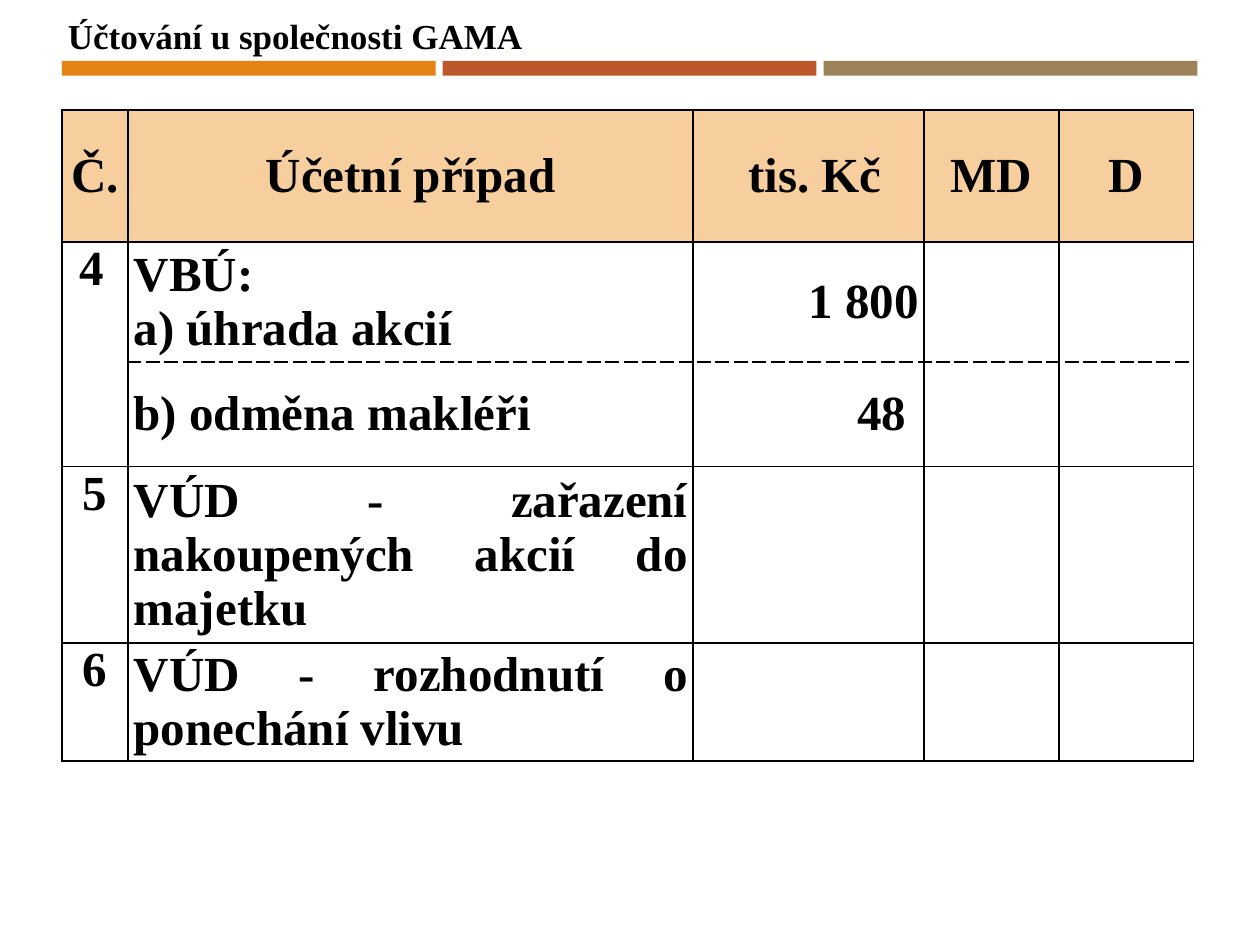
import pptx
import pptx.util
import pptx.dml.color
import pptx.enum.shapes
import pptx.enum.text
import pptx.oxml
import pptx.oxml.ns

Pt = pptx.util.Pt
ALIGN = pptx.enum.text.PP_ALIGN
ANCHOR = pptx.enum.text.MSO_ANCHOR
FONT = "Times New Roman"
COLORS = {
    "text": "000000",
    "header": "F7CE9D",
    "orange": "E48312",
    "rust": "BD582C",
    "khaki": "9B8357",
}


def format_paragraph(para, size, align):
    para.alignment = align
    for span in para.runs:
        span.font.name = FONT
        span.font.size = Pt(size)
        span.font.bold = True
        span.font.color.rgb = pptx.dml.color.RGBColor.from_string(COLORS["text"])


def add_border(cell, side, dash):
    cell._tc.get_or_add_tcPr().append(pptx.oxml.parse_xml(
        f'<a:ln{side} {pptx.oxml.ns.nsdecls("a")} w="{Pt(1)}">'
        f'<a:solidFill><a:srgbClr val="{COLORS["text"]}"/></a:solidFill>'
        f'<a:prstDash val="{dash}"/></a:ln{side}>'))


deck = pptx.Presentation()
deck.slide_width, deck.slide_height = Pt(720), Pt(540)
page = deck.slides.add_slide(deck.slide_layouts[6])

# Colour bars under the title
for index, name in enumerate(["orange", "rust", "khaki"]):
    bar = page.shapes.add_shape(pptx.enum.shapes.MSO_SHAPE.RECTANGLE,
                                Pt(35.4 + index * 217.6), Pt(34.8), Pt(213.6), Pt(8.4))
    bar.shadow.inherit = False
    bar.fill.solid()
    bar.fill.fore_color.rgb = pptx.dml.color.RGBColor.from_string(COLORS[name])
    bar.line.fill.background()

# Title
title = page.shapes.add_textbox(Pt(31.7), Pt(5), Pt(276.5), Pt(31.7))
title.text_frame.word_wrap = False
title.text_frame.text = "Účtování u společnosti GAMA"
format_paragraph(title.text_frame.paragraphs[0], 20, ALIGN.LEFT)

# Table of accounting entries
rows = [
    ["Č.", "Účetní případ", " tis. Kč", "MD", "D"],
    [" 4", "VBÚ:\na) úhrada akcií", "1 800", "", ""],
    ["", "b) odměna makléři", "48 ", "", ""],
    ["5", "VÚD - zařazení nakoupených akcií do majetku", "", "", ""],
    ["6", "VÚD - rozhodnutí o ponechání vlivu", "", "", ""],
]
column_widths = [38, 322.8, 132, 77, 77]
row_heights = [75.4, 68.6, 59.8, 100.8, 67.4]
column_aligns = [ALIGN.CENTER, ALIGN.JUSTIFY, ALIGN.RIGHT, ALIGN.CENTER, ALIGN.CENTER]

table = page.shapes.add_table(len(rows), len(column_widths), Pt(35.3), Pt(62.8),
                              Pt(sum(column_widths)), Pt(sum(row_heights))).table
table.horz_banding = False
for column, width in zip(table.columns, column_widths):
    column.width = Pt(width)
for row, height in zip(table.rows, row_heights):
    row.height = Pt(height)

for r, texts in enumerate(rows):
    for c, text in enumerate(texts):
        cell = table.cell(r, c)
        cell.margin_left = cell.margin_right = Pt(3.2)
        cell.margin_top = cell.margin_bottom = 0
        cell.vertical_anchor = ANCHOR.TOP if c == 0 and r > 0 else ANCHOR.MIDDLE

        # Entry 4 is split into two parts by a dashed line
        for side in "LRTB":
            split = c > 0 and (r, side) in [(1, "B"), (2, "T")]
            add_border(cell, side, "dash" if split else "solid")

        if r == 0:
            cell.fill.solid()
            cell.fill.fore_color.rgb = pptx.dml.color.RGBColor.from_string(COLORS["header"])
        else:
            cell.fill.background()

        cell.text_frame.text = text
        align = ALIGN.CENTER if r == 0 else column_aligns[c]
        if (r, c) == (1, 0):
            align = ALIGN.LEFT
        for para in cell.text_frame.paragraphs:
            format_paragraph(para, 28, align)

table.cell(1, 0).merge(table.cell(2, 0))

deck.save("out.pptx")
